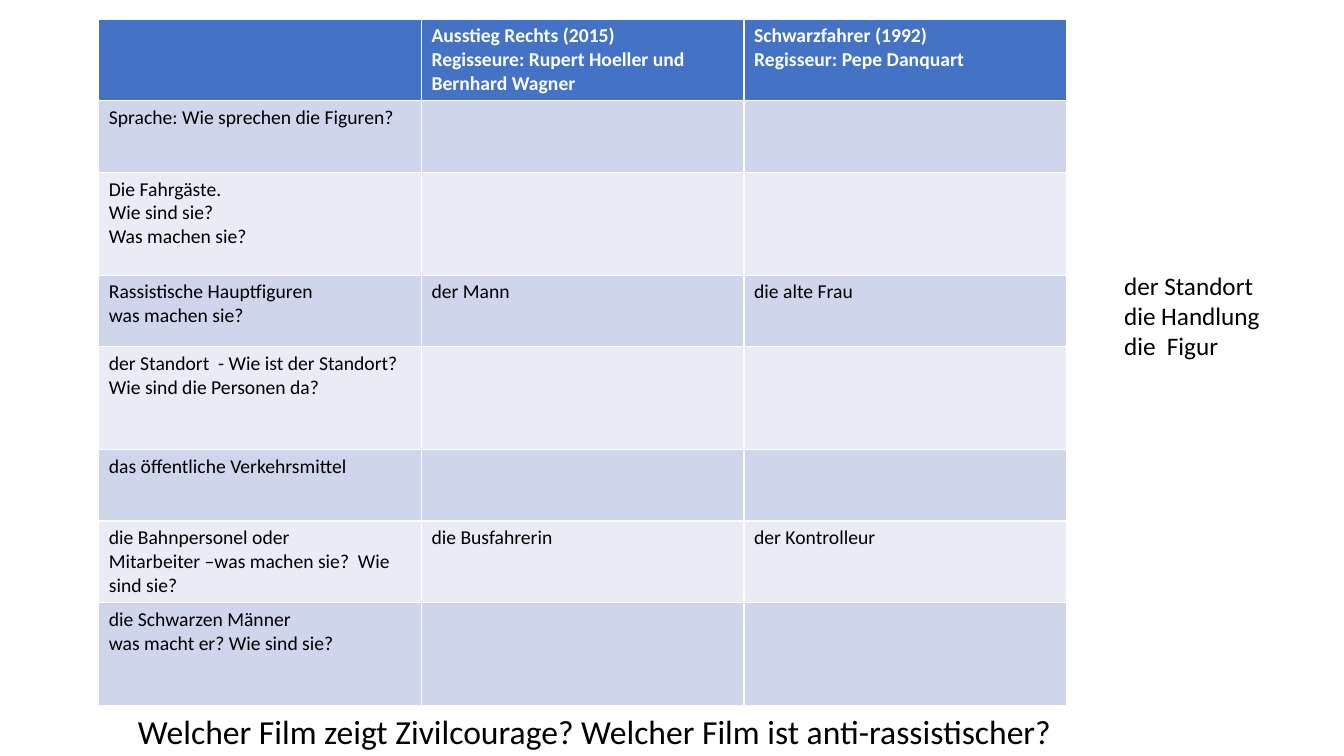
from pptx import Presentation
from pptx.dml.color import RGBColor
from pptx.util import Inches, Pt

FONT = "Calibri"
BLACK, WHITE = "000000", "FFFFFF"
HEADER, BAND_DARK, BAND_LIGHT = "4472C4", "CFD5EA", "E9EBF5"


def rgb(value):
    return RGBColor.from_string(value)


def write(tf, text, size=14, color=BLACK, bold=False):
    """Fill a text frame, one paragraph per line of text."""
    tf.word_wrap = True
    for i, line in enumerate(text.split("\n")):
        p = tf.paragraphs[0] if i == 0 else tf.add_paragraph()
        r = p.add_run()
        r.text = line
        r.font.name, r.font.size, r.font.bold = FONT, Pt(size), bold
        r.font.color.rgb = rgb(color)


prs = Presentation()
prs.slide_width, prs.slide_height = Inches(13.33), Inches(7.5)
s = prs.slides.add_slide(prs.slide_layouts[6])

# Film comparison: row height, then the texts of the three columns
rows = [
    (0.41, "", "Ausstieg Rechts (2015)\nRegisseure: Rupert Hoeller und Bernhard Wagner",
     "Schwarzfahrer (1992)\nRegisseur: Pepe Danquart"),
    (0.71, "Sprache: Wie sprechen die Figuren?", "", ""),
    (1.02, "Die Fahrgäste.\nWie sind sie?\nWas machen sie?", "", ""),
    (0.71, "Rassistische Hauptfiguren\nwas machen sie?", "der Mann", "die alte Frau"),
    (1.02, "der Standort  - Wie ist der Standort?  Wie sind die Personen da?", "", ""),
    (0.71, "das öffentliche Verkehrsmittel", "", ""),
    (0.71, "die Bahnpersonel oder\nMitarbeiter –was machen sie?  Wie sind sie?",
     "die Busfahrerin", "der Kontrolleur"),
    (1.02, "die Schwarzen Männer\nwas macht er? Wie sind sie?", "", ""),
]
height = sum(row[0] for row in rows)
table = s.shapes.add_table(len(rows), 3, Inches(0.98), Inches(0.19),
                           Inches(9.6), Inches(height)).table
for col in table.columns:
    col.width = Inches(3.2)

for i, (row_height, *texts) in enumerate(rows):
    table.rows[i].height = Inches(row_height)
    is_header = i == 0
    fill = HEADER if is_header else BAND_DARK if i % 2 else BAND_LIGHT
    for j, text in enumerate(texts):
        cell = table.cell(i, j)
        cell.fill.solid()
        cell.fill.fore_color.rgb = rgb(fill)
        if text:
            write(cell.text_frame, text, color=WHITE if is_header else BLACK, bold=is_header)
        else:
            cell.text_frame.paragraphs[0].font.size = Pt(14)

# Closing question and vocabulary list
notes = [
    (1.27, 7, 11.61, 0.5, 24,
     "Welcher Film zeigt Zivilcourage? Welcher Film ist anti-rassistischer?"),
    (11.05, 2.63, 1.72, 1.31, 18, "der Standort\ndie Handlung\ndie  Figur"),
]
for x, y, w, h, size, text in notes:
    sp = s.shapes.add_textbox(Inches(x), Inches(y), Inches(w), Inches(h))
    write(sp.text_frame, text, size=size)

prs.save("out.pptx")
